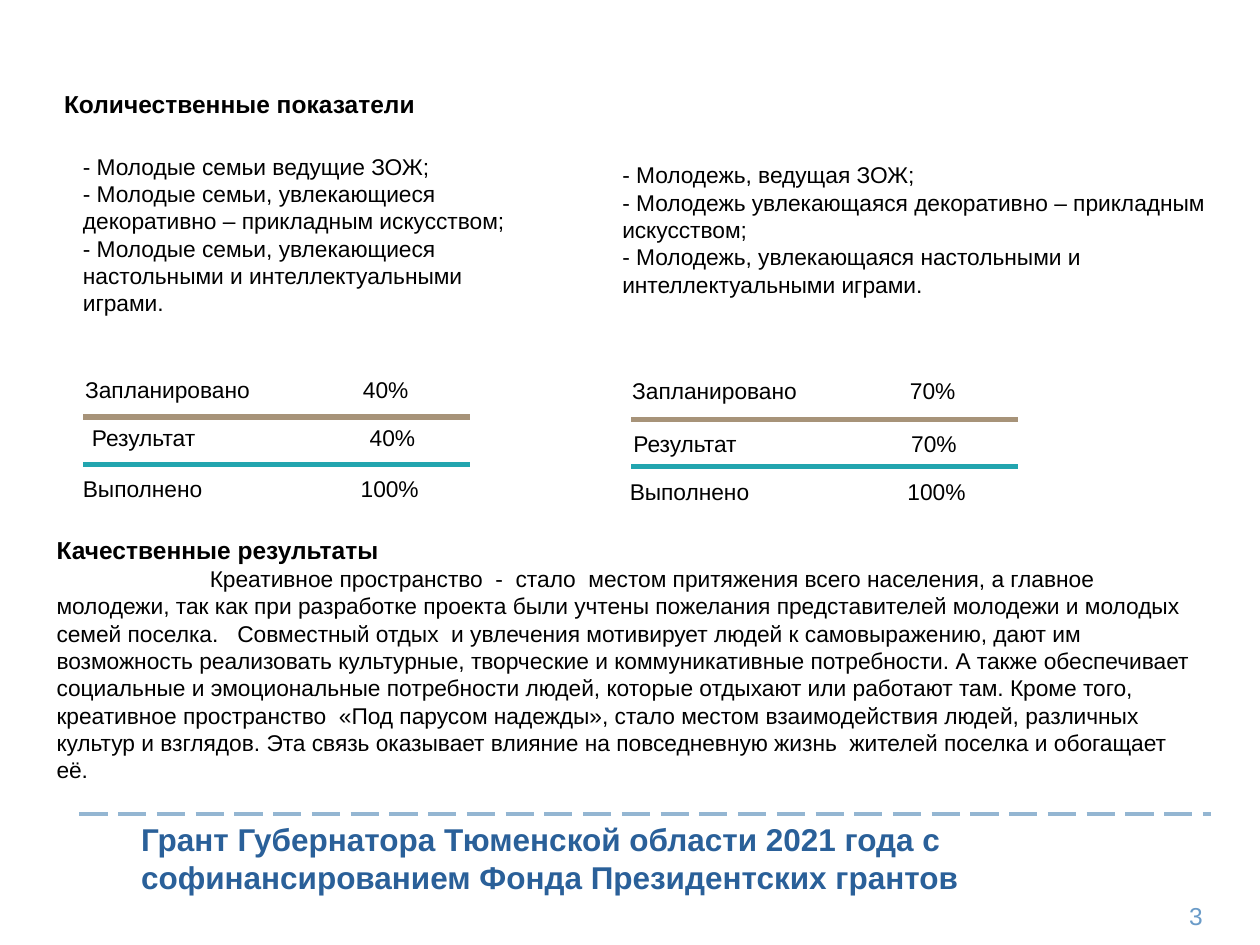
from lxml.etree import SubElement
from pptx import Presentation
from pptx.dml.color import RGBColor
from pptx.enum.dml import MSO_LINE as Dash
from pptx.enum.shapes import MSO_CONNECTOR as Link
from pptx.enum.text import MSO_ANCHOR as Anchor, MSO_AUTO_SIZE as Fit, PP_ALIGN as Align
from pptx.oxml.ns import qn
from pptx.util import Pt

FONT = "Arial"
BLACK, BLUE, PALE = "000000", "2A6099", "6A9BC8"
SAND, TEAL, DASH = "A79379", "22A5AF", "94B6D2"
TAB = 158.7
INDENT = 87.6

LEFT = [
    "- Молодые семьи ведущие ЗОЖ;",
    "- Молодые семьи, увлекающиеся декоративно – прикладным искусством;",
    "- Молодые семьи, увлекающиеся настольными и интеллектуальными играми.",
]
RIGHT = [
    "- Молодежь, ведущая ЗОЖ;",
    "- Молодежь увлекающаяся декоративно – прикладным искусством;",
    "- Молодежь, увлекающаяся настольными и интеллектуальными играми.",
]
STORY = (
    "Креативное пространство  -  стало  местом притяжения всего населения, "
    "а главное молодежи, так как при разработке проекта были учтены пожелания "
    "представителей молодежи и молодых семей поселка.   Совместный отдых  и "
    "увлечения мотивирует людей к самовыражению, дают им возможность реализовать "
    "культурные, творческие и коммуникативные потребности. А также обеспечивает "
    "социальные и эмоциональные потребности людей, которые отдыхают или работают "
    "там. Кроме того, креативное пространство  «Под парусом надежды», стало местом "
    "взаимодействия людей, различных культур и взглядов. Эта связь оказывает "
    "влияние на повседневную жизнь  жителей поселка и обогащает её."
)


def paint(hue):
    return RGBColor.from_string(hue)


def style(para, size=13, hue=BLACK, bold=False, align=Align.LEFT):
    para.alignment = align
    font = para.font
    font.name, font.size, font.bold = FONT, Pt(size), bold
    font.color.rgb = paint(hue)


def place(shape, box):
    shape.left, shape.top, shape.width, shape.height = map(Pt, box)


def write(slide, box, lines, **look):
    frame = slide.shapes.add_textbox(*map(Pt, box)).text_frame
    frame.word_wrap = True
    frame.text = "\n".join(lines)
    for para in frame.paragraphs:
        style(para, **look)
    return frame.paragraphs


def rule(slide, left, top, width, hue, thick):
    line = slide.shapes.add_connector(
        Link.STRAIGHT, Pt(left), Pt(top), Pt(left + width), Pt(top))
    line.line.color.rgb = paint(hue)
    line.line.width = Pt(thick)
    SubElement(line._element.spPr, qn("a:effectLst"))
    return line


def add_row(slide, box, label, value):
    para = write(slide, box, [f"{label}\t{value}"])[0]
    props = para._p.get_or_add_pPr()
    stops = SubElement(props, qn("a:tabLst"))
    SubElement(stops, qn("a:tab"), pos=str(Pt(TAB)), algn="l")


def add_scores(slide, box, rows, rules):
    left, top, width, height = box
    for label, value, shift, drop in rows:
        add_row(slide, (left + shift, top + drop, width, height), label, value)
    for drop, hue in rules:
        rule(slide, left + 6.5, top + drop, 221, hue, 3)


def add_story(slide, box):
    head, body = write(slide, box, ["Качественные результаты", STORY])
    style(head, size=14, bold=True)
    body._p.get_or_add_pPr().set("indent", str(Pt(INDENT)))


def add_foot(slide, box):
    left, top, width, height = box
    line = rule(slide, left, top, width, DASH, 2)
    line.line.dash_style = Dash.LONG_DASH
    title = slide.shapes.title
    place(title, (left + 28, top, 527, 50.4))
    frame = title.text_frame
    frame.text = ("Грант Губернатора Тюменской области 2021 года "
                  "с софинансированием Фонда Президентских грантов")
    frame.word_wrap = True
    frame.auto_size = Fit.NONE
    frame.vertical_anchor = Anchor.TOP
    style(frame.paragraphs[0], size=18, hue=BLUE, bold=True)
    write(slide, (left + 481, top + 46, 168, 25), ["3"],
          size=14, hue=PALE, align=Align.RIGHT)


def main():
    deck = Presentation()
    deck.slide_width, deck.slide_height = Pt(720), Pt(540)
    slide = deck.slides.add_slide(deck.slide_layouts[5])
    write(slide, (29.5, 47.5, 306, 24.5), ["Количественные показатели"],
          size=14, bold=True)
    write(slide, (40.3, 83.5, 271, 102), LEFT)
    write(slide, (348.5, 88.6, 356, 86), RIGHT)
    add_scores(slide, (41, 211, 224, 23), [
        ("Запланировано", "40%", 0.6, 0),
        ("Результат", "40%", 4.5, 27.3),
        ("Выполнено", "100%", -0.7, 56.8),
    ], [(27.3, SAND), (54.6, TEAL)])
    add_scores(slide, (354.2, 212, 224, 23), [
        ("Запланировано", "70%", 0, 0),
        ("Результат", "70%", 0.7, 30),
        ("Выполнено", "100%", -1.4, 57.3),
    ], [(27.7, SAND), (54.5, TEAL)])
    add_story(slide, (25.2, 302.4, 669, 136))
    add_foot(slide, (45.4, 465.1, 646.5, 72))
    deck.save("out.pptx")


if __name__ == "__main__":
    main()
